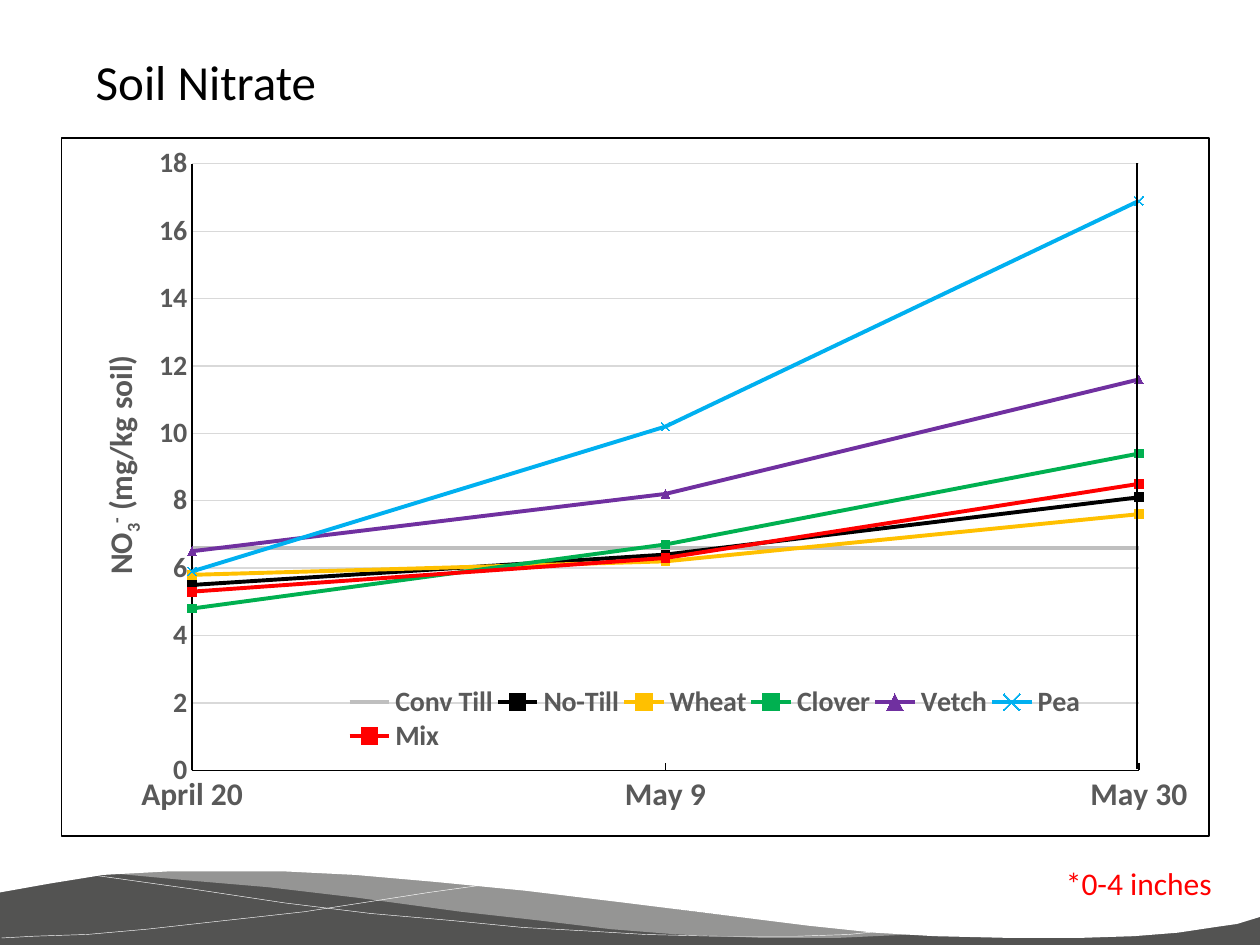
from lxml import etree
from pptx import Presentation
from pptx.chart.data import CategoryChartData
from pptx.dml.color import RGBColor
from pptx.enum.chart import XL_CHART_TYPE, XL_LEGEND_POSITION, XL_MARKER_STYLE, XL_TICK_MARK
from pptx.enum.shapes import MSO_CONNECTOR, MSO_SHAPE
from pptx.enum.text import MSO_ANCHOR, PP_ALIGN
from pptx.oxml import parse_xml
from pptx.oxml.ns import nsdecls, qn
from pptx.util import Pt

SQUARE = XL_MARKER_STYLE.SQUARE
TRIANGLE = XL_MARKER_STYLE.TRIANGLE
CROSS = XL_MARKER_STYLE.X
NO_MARKER = XL_MARKER_STYLE.NONE
TITLE_ONLY = 5


class Theme:
    font = "Calibri"
    white = RGBColor.from_string("FFFFFF")
    black = RGBColor.from_string("000000")
    red = RGBColor.from_string("FF0000")
    label = RGBColor.from_string("595959")
    grid = RGBColor.from_string("D9D9D9")
    wave = RGBColor.from_string("535352")
    wave_light = RGBColor.from_string("F8F8F8")
    title_size = Pt(28)
    large_size = Pt(18)
    label_size = Pt(16)
    hairline = Pt(0.75)


def style_font(font, size, color, bold=False):
    font.name, font.size, font.bold = Theme.font, size, bold
    font.color.rgb = color


def place_in_chart(element, index, **fractions):
    """Give a chart part a manual layout, in fractions of the chart."""
    for old_layout in element.findall(qn("c:layout")):
        element.remove(old_layout)
    layout = etree.Element(qn("c:layout"))
    manual = etree.SubElement(layout, qn("c:manualLayout"))
    if element.tag == qn("c:plotArea"):
        etree.SubElement(manual, qn("c:layoutTarget"), val="inner")
    for side in ("x", "y"):
        etree.SubElement(manual, qn(f"c:{side}Mode"), val="edge")
    for side, fraction in fractions.items():
        etree.SubElement(manual, qn(f"c:{side}"), val=str(fraction))
    element.insert(index, layout)


presentation = Presentation()
presentation.slide_width, presentation.slide_height = Pt(720), Pt(540)
slide = presentation.slides.add_slide(presentation.slide_layouts[TITLE_ONLY])
shapes = slide.shapes

# Wave along the bottom: dark band, light swell, two thin lines, white upper edge
swell = [
    (63.4, 499), (106, 502.6), (153, 506.9), (204, 513.4), (263, 520.6), (308, 526.3),
    (349, 530.6), (387, 533.5), (436, 535.7), (478, 535.7), (521, 533.5), (480, 530),
    (432, 525), (398, 520.6), (338, 512.6), (284, 506.9), (235, 501.8), (192, 499),
    (154, 496.8), (112, 496.8), (76, 498.2),
]
falling_line = [
    (52.6, 499.7), (110, 508.3), (163, 515.5), (212, 522), (258, 526.3), (299, 530),
    (336, 532), (369, 534.2), (411, 535), (455, 535), (485, 533.5), (504, 532),
]
rising_line = [
    (274, 506), (245, 510.5), (213, 514.8), (174, 520.6), (129, 525.6), (84, 530.6),
    (50, 533.5), (20, 535), (1.4, 535.7),
]
upper_edge = [
    (0, 510.5), (28, 504.7), (59, 500.4), (96, 498), (127, 497.5), (163, 498),
    (203, 500.4), (249, 504), (300, 509), (358, 515.5), (422, 524), (462, 529),
    (500, 532.8), (534, 535), (578, 536.4), (616, 536.4), (648, 535), (673, 532.8),
    (693, 530), (707, 527.8), (720, 524), (720, 475), (0, 475),
]

band = shapes.add_shape(MSO_SHAPE.RECTANGLE, 0, Pt(475), Pt(720), Pt(65))
band.fill.solid()
band.fill.fore_color.rgb = Theme.wave
band.line.fill.background()
band.shadow.inherit = False

for points, fill, opacity in (
    (swell, Theme.wave_light, 40),
    (falling_line, None, None),
    (rising_line, None, None),
    (upper_edge, Theme.white, 100),
):
    builder = shapes.build_freeform(*points[0], scale=Pt(1))
    builder.add_line_segments(points[1:], close=fill is not None)
    curve = builder.convert_to_shape()
    curve.shadow.inherit = False
    if fill is None:
        curve.fill.background()
        curve.line.color.rgb = Theme.white
        curve.line.width = Pt(0.25)
        continue
    curve.fill.solid()
    curve.fill.fore_color.rgb = fill
    curve.line.fill.background()
    if opacity < 100:
        color = curve.fill._xPr.find(".//" + qn("a:srgbClr"))
        etree.SubElement(color, qn("a:alpha"), val=str(opacity * 1000))

backdrop = shapes.add_shape(MSO_SHAPE.RECTANGLE, 0, Pt(395), Pt(720), Pt(96))
backdrop.fill.solid()
backdrop.fill.fore_color.rgb = Theme.white
backdrop.line.fill.background()
backdrop.shadow.inherit = False

# Nitrate chart
treatments = [
    ("Conv Till", (6.6, 6.6, 6.6), "BFBFBF", NO_MARKER),
    ("No-Till", (5.5, 6.4, 8.1), "000000", SQUARE),
    ("Wheat", (5.8, 6.2, 7.6), "FFC000", SQUARE),
    ("Clover", (4.8, 6.7, 9.4), "00B050", SQUARE),
    ("Vetch", (6.5, 8.2, 11.6), "7030A0", TRIANGLE),
    ("Pea", (5.9, 10.2, 16.9), "00B0F0", CROSS),
    ("Mix", (5.3, 6.3, 8.5), "FF0000", SQUARE),
]
chart_data = CategoryChartData(number_format="0.0")
chart_data.categories = ["April 20", "May 9", "May 30"]
for name, values, _, _ in treatments:
    chart_data.add_series(name, values)

chart = shapes.add_chart(
    XL_CHART_TYPE.LINE_MARKERS, Pt(34.6), Pt(78.5), Pt(656.6), Pt(399.6), chart_data
).chart
chart.has_title = False
style_font(chart.font, Pt(10), Theme.black)
chart_space = chart._chartSpace
chart_space.find(qn("c:chart")).addnext(parse_xml(
    f'<c:spPr {nsdecls("c", "a")}><a:solidFill><a:srgbClr val="{Theme.white}"/></a:solidFill>'
    f'<a:ln w="{Theme.hairline}"><a:solidFill><a:srgbClr val="{Theme.black}"/></a:solidFill></a:ln>'
    "</c:spPr>"
))
place_in_chart(chart_space.find(".//" + qn("c:plotArea")), 0, x=0.114, y=0.037, w=0.825, h=0.869)

chart.plots[0].vary_by_categories = False
for series, (_, _, hex_color, marker_style) in zip(chart.plots[0].series, treatments):
    color = RGBColor.from_string(hex_color)
    series.smooth = False
    series.format.line.color.rgb = color
    series.format.line.width = Pt(2.25)
    series.marker.style = marker_style
    if marker_style != NO_MARKER:
        series.marker.size = 5
        series.marker.format.fill.solid()
        series.marker.format.fill.fore_color.rgb = color
        series.marker.format.line.color.rgb = color

date_axis, nitrate_axis = chart.category_axis, chart.value_axis
for axis, size, tick in (
    (date_axis, Theme.large_size, XL_TICK_MARK.INSIDE),
    (nitrate_axis, Theme.label_size, XL_TICK_MARK.NONE),
):
    style_font(axis.tick_labels.font, size, Theme.label, bold=True)
    axis.major_tick_mark = tick
    axis.minor_tick_mark = XL_TICK_MARK.NONE
    axis.format.line.color.rgb = Theme.black
    axis.format.line.width = Theme.hairline

nitrate_axis.minimum_scale, nitrate_axis.maximum_scale = 0, 18
nitrate_axis.major_unit = 2
nitrate_axis.tick_labels.number_format = "0"
nitrate_axis.tick_labels.number_format_is_linked = False
nitrate_axis.has_major_gridlines = True
nitrate_axis.major_gridlines.format.line.color.rgb = Theme.grid
nitrate_axis.major_gridlines.format.line.width = Theme.hairline

# Lines start on the value axis itself
axis_element = nitrate_axis._element
for old_setting in axis_element.findall(qn("c:crossBetween")):
    axis_element.remove(old_setting)
cross_between = etree.Element(qn("c:crossBetween"), val="midCat")
axis_element.find(qn("c:crosses")).addnext(cross_between)

paragraph = nitrate_axis.axis_title.text_frame.paragraphs[0]
for text, baseline in (("NO", 0), ("3", -25000), ("-", 30000), (" (mg/kg soil)", 0)):
    run = paragraph.add_run()
    run.text = text
    style_font(run.font, Theme.large_size, Theme.label, bold=True)
    if baseline:
        run.font._element.set("baseline", str(baseline))
place_in_chart(nitrate_axis.axis_title._element, 1, x=0.03, y=0.306)

chart.has_legend = True
chart.legend.position = XL_LEGEND_POSITION.RIGHT
chart.legend.include_in_layout = True
style_font(chart.legend.font, Theme.label_size, Theme.label, bold=True)
place_in_chart(chart.legend._element, 1, x=0.247, y=0.784, w=0.645, h=0.096)

right_edge = shapes.add_connector(MSO_CONNECTOR.STRAIGHT, Pt(649.7), Pt(93.2), Pt(649.7), Pt(439.5))
right_edge.line.color.rgb = Theme.black
right_edge.line.width = Theme.hairline
etree.SubElement(right_edge._element.spPr, qn("a:effectLst"))

# Title and depth note
title = shapes.title
title.left, title.top, title.width, title.height = Pt(47.5), Pt(26), Pt(147.6), Pt(41)
note = shapes.add_textbox(Pt(602), Pt(490.3), Pt(100.8), Pt(28.8))
for shape, text, size, color in (
    (title, "Soil Nitrate", Theme.title_size, Theme.black),
    (note, "*0-4 inches", Theme.large_size, Theme.red),
):
    frame = shape.text_frame
    frame.word_wrap = False
    frame.vertical_anchor = MSO_ANCHOR.TOP
    paragraph = frame.paragraphs[0]
    paragraph.alignment = PP_ALIGN.LEFT
    run = paragraph.add_run()
    run.text = text
    style_font(run.font, size, color)

presentation.save("out.pptx")
